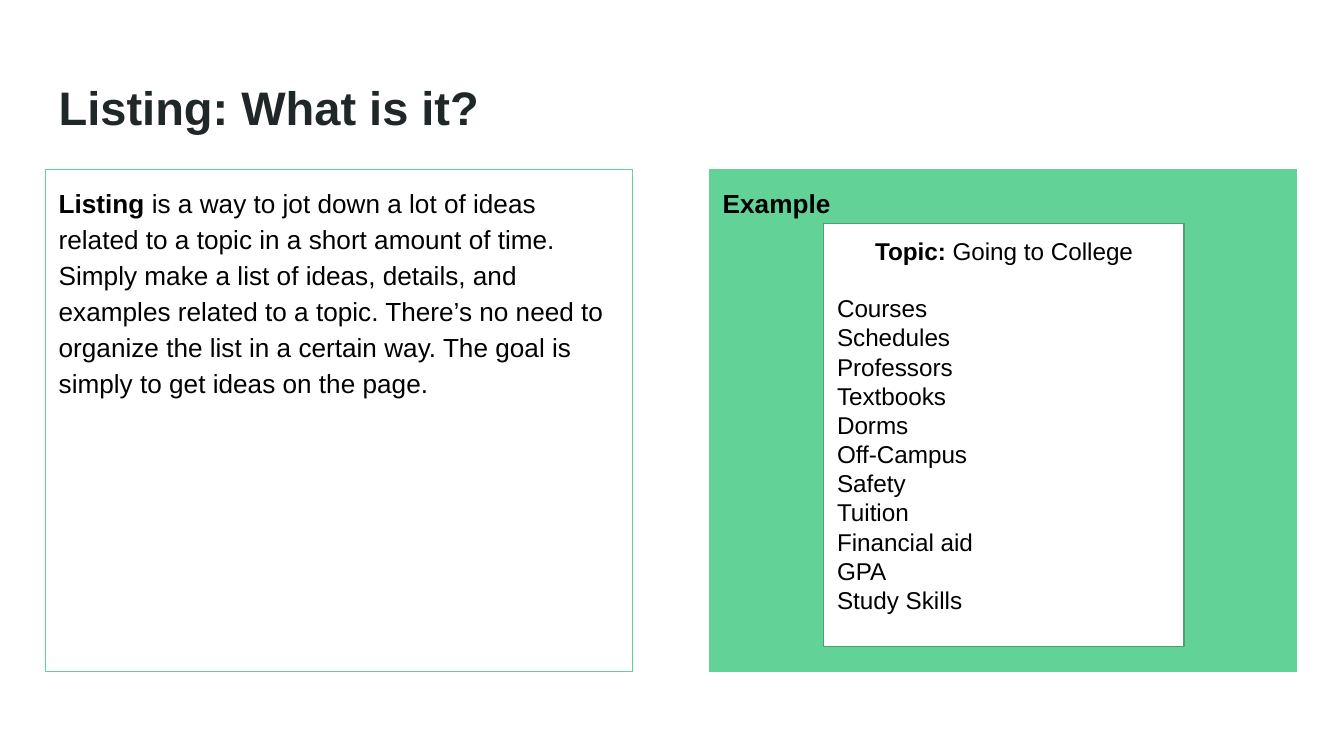
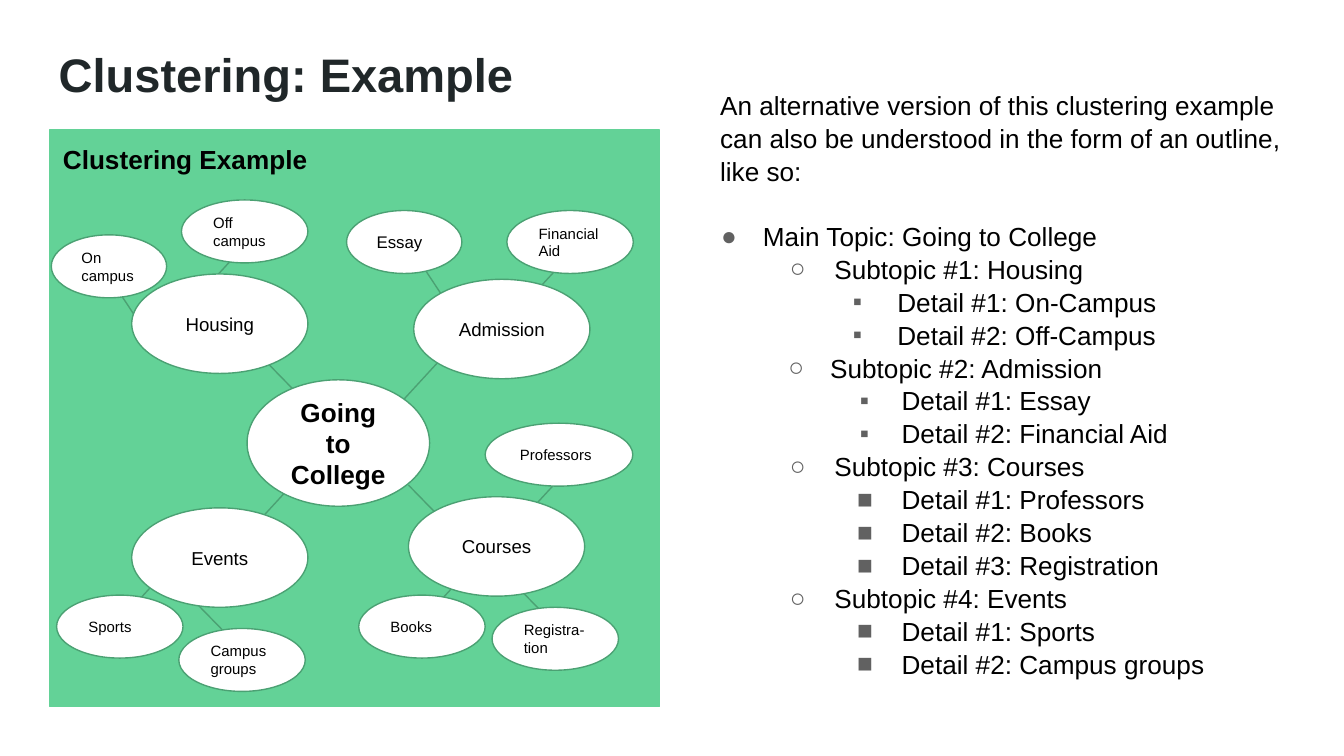
from lxml.etree import SubElement
from pptx import Presentation
from pptx.dml.color import RGBColor
from pptx.enum.shapes import MSO_CONNECTOR as Connector, MSO_SHAPE as Shape
from pptx.enum.text import MSO_ANCHOR as Anchor, PP_ALIGN as Align
from pptx.oxml.ns import qn
from pptx.util import Cm, Pt

GREEN = RGBColor(0x63, 0xD2, 0x97)
DARK_GREEN = RGBColor(0x4B, 0xA1, 0x73)
INK = RGBColor(0x20, 0x27, 0x29)
BLACK = RGBColor(0, 0, 0)
WHITE = RGBColor(0xFF, 0xFF, 0xFF)
GRAY = RGBColor(0x61, 0x61, 0x61)
FONT = "Arial"
INSET = Cm(0.25)

DEFINITION = (
    " is a way to jot down a lot of ideas related to a topic in a short amount of time. "
    "Simply make a list of ideas, details, and examples related to a topic. "
    "There’s no need to organize the list in a certain way. "
    "The goal is simply to get ideas on the page."
)
IDEAS = ["Courses", "Schedules", "Professors", "Textbooks", "Dorms", "Off-Campus",
         "Safety", "Tuition", "Financial aid", "GPA", "Study Skills"]

HUB_SIZE = (3.33, 1.88)
HUBS = [("Housing", 1.55, 2.72), ("Admission", 6.88, 2.82),
        ("Events", 1.55, 7.14), ("Courses", 6.78, 6.93)]
LEAF_HEIGHT = 1.19
LEAVES = [
    ("On campus", 0.03, 1.98, 2.18, 8), ("Off campus", 2.49, 1.32, 2.39, 8),
    ("Essay", 5.61, 1.52, 2.18, 9), ("Financial Aid", 8.64, 1.52, 2.39, 8),
    ("Sports", 0.13, 8.79, 2.39, 8), ("Campus groups", 2.44, 9.42, 2.39, 8),
    ("Books", 5.84, 8.79, 2.39, 8), ("Registra-tion", 8.36, 9.02, 2.39, 8),
    ("Professors", 8.23, 5.54, 2.79, 8),
]
LINKS = {
    (0.91, -0.99): [(6.58, 5.21), (8.84, 3.43), (3.71, 7.65), (2.72, 3.23),
                    (7.01, 9.3), (1.3, 9.3), (8.64, 7.67)],
    (0.84, 0.86): [(3.81, 4.09), (2.69, 8.86), (6.78, 6.71), (8.64, 8.43)],
    (0.6, 0.91): [(1.24, 2.95), (7.01, 2.51)],
}

OUTLINE = [
    ("Housing", 2.54, 0.84, "▪", 3.73, 0.84, ["On-Campus", "Off-Campus"]),
    ("Admission", 2.46, 0.79, "▪", 3.81, 0.79, ["Essay", "Financial Aid"]),
    ("Courses", 2.54, 0.84, "■", 3.81, 0.84, ["Professors", "Books", "Registration"]),
    ("Events", 2.54, 0.84, "■", 3.81, 0.84, ["Sports", "Campus groups"]),
]


def write(frame, text, *, lead="", size=14, bold=False, color=BLACK, align=Align.LEFT,
          spacing=1.0, after=0, level=0, indent=0, hang=0, bullet=None):
    """Add one formatted paragraph, optionally opening with a bold lead."""
    first = frame.paragraphs[0]
    para = frame.add_paragraph() if first.runs else first
    para.alignment, para.level = align, level
    para.line_spacing, para.space_after = spacing, Pt(after)
    for words, heavy in ((lead, True), (text, bold)):
        if words:
            span = para.add_run()
            span.text = words
            span.font.name, span.font.size, span.font.bold = FONT, Pt(size), heavy
            span.font.color.rgb = color
    props = para._p.get_or_add_pPr()
    props.set("marL", str(Cm(indent)))
    props.set("indent", str(-Cm(hang)))
    if bullet:
        tint = SubElement(SubElement(props, qn("a:buClr")), qn("a:srgbClr"))
        tint.set("val", str(GRAY))
        SubElement(props, qn("a:buFont")).set("typeface", FONT)
        SubElement(props, qn("a:buChar")).set("char", bullet)


def prepare(frame, anchor):
    """Set wrapping, insets and anchor, and return the text frame."""
    frame.word_wrap = True
    frame.vertical_anchor = anchor
    frame.margin_left = frame.margin_right = INSET
    frame.margin_top = frame.margin_bottom = INSET
    return frame


def add_text(page, box):
    """Add a text box and return its frame."""
    return prepare(page.shapes.add_textbox(*map(Cm, box)).text_frame, Anchor.TOP)


def add_panel(page, box, fill=WHITE, line=DARK_GREEN, kind=Shape.RECTANGLE, anchor=Anchor.TOP):
    """Add an outlined shape and return its text frame."""
    shape = page.shapes.add_shape(kind, *map(Cm, box))
    shape.shadow.inherit = False
    shape.fill.solid()
    shape.fill.fore_color.rgb = fill
    shape.line.color.rgb = line
    shape.line.width = Pt(0.75)
    return prepare(shape.text_frame, anchor)


def add_bubble(page, box, text, **style):
    """Add a white ellipse with its label."""
    frame = add_panel(page, box, kind=Shape.OVAL, anchor=Anchor.MIDDLE)
    write(frame, text, **style)


def add_link(page, x, y, across, down):
    """Add a thin line from a point by an offset."""
    link = page.shapes.add_connector(
        Connector.STRAIGHT, Cm(x), Cm(y), Cm(x + across), Cm(y + down))
    link.line.color.rgb = DARK_GREEN
    link.line.width = Pt(0.75)
    SubElement(link._element.spPr, qn("a:effectLst"))


def add_page(deck, title, top):
    """Add a blank slide with its title."""
    page = deck.slides.add_slide(deck.slide_layouts[6])
    write(add_text(page, (0.86, top, 23.67, 1.6)), title, size=25.2, bold=True, color=INK)
    return page


def add_example(page, box):
    """Add the green panel holding the card of listed ideas."""
    left, top, _, _ = box
    write(add_panel(page, box, GREEN, GREEN), "Example", bold=True, spacing=1.15, after=12)
    card = add_panel(page, (left + 2.16, top + 1.02, 6.81, 8.0))
    write(card, "Going to College", lead="Topic: ", size=13, align=Align.CENTER, after=15)
    for idea in IDEAS:
        write(card, idea, size=13)


def add_cluster(page, box):
    """Add the green panel holding the cluster of bubbles."""
    left, top, _, _ = box
    write(add_panel(page, box, GREEN, GREEN), "Clustering Example", bold=True, after=12)
    for offset, starts in LINKS.items():
        for x, y in starts:
            add_link(page, left + x, top + y, *offset)
    add_bubble(page, (left + 3.73, top + 4.72, 3.45, 2.39), "Going to College",
               bold=True, align=Align.CENTER)
    for text, x, y in HUBS:
        add_bubble(page, (left + x, top + y, *HUB_SIZE), text, size=10, align=Align.CENTER)
    for text, x, y, width, size in LEAVES:
        add_bubble(page, (left + x, top + y, width, LEAF_HEIGHT), text, size=size)


def add_outline(page, box):
    """Add the cluster again as a bulleted outline."""
    frame = add_text(page, box)
    write(frame, "An alternative version of this clustering example can also be understood "
          "in the form of an outline, like so:", spacing=1.05, after=17, indent=0.38)
    write(frame, "Main Topic: Going to College", spacing=1.05,
          indent=1.19, hang=0.79, bullet="●")
    for number, (topic, indent, hang, mark, inner, inner_hang, details) in enumerate(OUTLINE, 1):
        write(frame, f"Subtopic #{number}: {topic}", spacing=1.05, level=1,
              indent=indent, hang=hang, bullet="○")
        for count, detail in enumerate(details, 1):
            write(frame, f"Detail #{count}: {detail}", spacing=1.05, level=2,
                  indent=inner, hang=inner_hang, bullet=mark)


def build_listing(deck):
    """Build the slide that explains listing."""
    page = add_page(deck, "Listing: What is it?", 1.24)
    frame = add_panel(page, (0.86, 3.2, 11.1, 9.5), line=GREEN)
    write(frame, DEFINITION, lead="Listing", spacing=1.15, after=12)
    add_example(page, (13.41, 3.2, 11.1, 9.5))


def build_clustering(deck):
    """Build the slide that shows clustering."""
    page = add_page(deck, "Clustering: Example", 0.61)
    add_outline(page, (12.98, 1.42, 12.04, 12.27))
    add_cluster(page, (0.94, 2.46, 11.53, 10.9))


def main():
    """Build and save the deck."""
    deck = Presentation()
    deck.slide_width, deck.slide_height = Cm(25.4), Cm(14.29)
    build_listing(deck)
    build_clustering(deck)
    deck.save("out.pptx")


if __name__ == "__main__":
    main()
